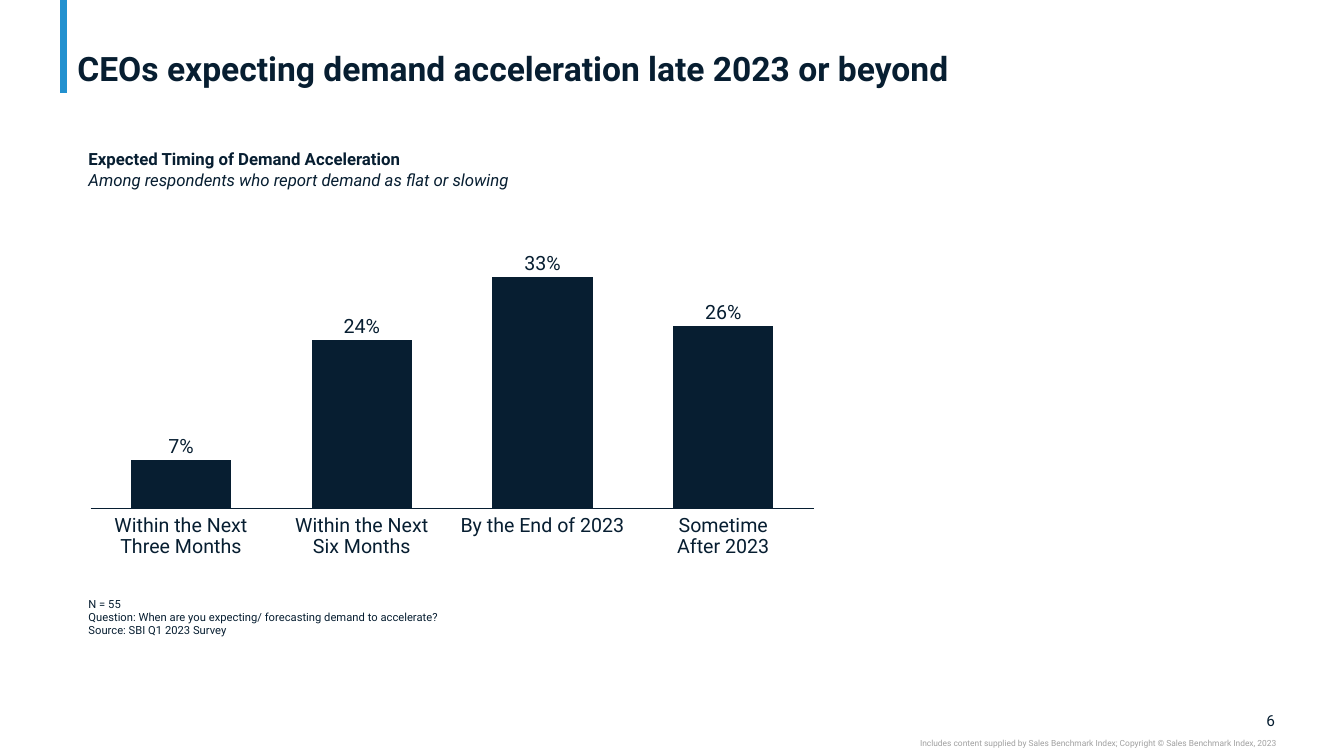
import lxml.etree
import pptx
import pptx.chart.data
import pptx.dml.color
import pptx.enum.chart
import pptx.enum.shapes
import pptx.enum.text
import pptx.oxml
import pptx.oxml.ns
import pptx.util

Cm = pptx.util.Cm
Pt = pptx.util.Pt
Align = pptx.enum.text.PP_ALIGN
Anchor = pptx.enum.text.MSO_ANCHOR
qn = pptx.oxml.ns.qn

NAVY, BLUE, GREY = "071E31", "2391CF", "A0A0A0"


def colour(value):
    return pptx.dml.color.RGBColor.from_string(value)


class SlideBuilder:
    def __init__(self, page, font="Roboto"):
        self.page = page
        self.font = font

    def text(self, left, top, width, height, paras, size, color=NAVY, align=Align.LEFT,
             anchor=Anchor.TOP, insets=(0, 0), wrap=True, spacing=None):
        """Each para is a list of lines; each line is (words, bold, italic)."""
        box = self.page.shapes.add_textbox(Cm(left), Cm(top), Cm(width), Cm(height))
        frame = box.text_frame
        frame.word_wrap = wrap
        frame.vertical_anchor = anchor
        frame.margin_left = frame.margin_right = Cm(insets[0])
        frame.margin_top = frame.margin_bottom = Cm(insets[1])
        for index, lines in enumerate(paras):
            para = frame.add_paragraph() if index else frame.paragraphs[0]
            para.alignment = align
            if spacing:
                para.line_spacing = spacing
            for number, (words, bold, italic) in enumerate(lines):
                if number:
                    para.add_line_break()
                span = para.add_run()
                span.text = words
                span.font.name = self.font
                span.font.size = Pt(size)
                span.font.bold = bold
                span.font.italic = italic
                span.font.color.rgb = colour(color)

    def line(self, x1, y1, x2, y2, color, width):
        line = self.page.shapes.add_connector(
            pptx.enum.shapes.MSO_CONNECTOR.STRAIGHT, Cm(x1), Cm(y1), Cm(x2), Cm(y2))
        line.line.color.rgb = colour(color)
        line.line.width = Pt(width)
        lxml.etree.SubElement(line.element.spPr, qn("a:effectLst"))

    def columns(self, left, top, width, height, plot, names, values, maximum):
        data = pptx.chart.data.CategoryChartData()
        data.categories = names
        data.add_series("Series 1", values)
        chart = self.page.shapes.add_chart(
            pptx.enum.chart.XL_CHART_TYPE.COLUMN_STACKED,
            Cm(left), Cm(top), Cm(width), Cm(height), data).chart
        chart.has_title = False
        chart.has_legend = False
        chart.font.name = self.font
        chart.font.size = Pt(10)
        chart.font.color.rgb = colour(NAVY)

        bars = chart.plots[0]
        bars.gap_width = 80
        bars.overlap = 100
        bars.vary_by_categories = False
        fill = bars.series[0].format.fill
        fill.solid()
        fill.fore_color.rgb = colour(NAVY)

        axis = chart.category_axis
        axis.tick_label_position = pptx.enum.chart.XL_TICK_LABEL_POSITION.NONE
        axis.major_tick_mark = pptx.enum.chart.XL_TICK_MARK.NONE
        axis.format.line.color.rgb = colour(NAVY)
        axis.format.line.width = Pt(0.75)
        scale = chart.value_axis
        scale.minimum_scale = 0
        scale.maximum_scale = maximum
        scale.has_major_gridlines = False
        scale.visible = False

        # Fixed inner plot area
        area = chart.element.xpath("c:chart/c:plotArea")[0]
        for old in area.findall(qn("c:layout")):
            area.remove(old)
        layout = pptx.oxml.parse_xml(
            f'<c:layout {pptx.oxml.ns.nsdecls("c")}><c:manualLayout/></c:layout>')
        settings = [("layoutTarget", "inner"), ("xMode", "edge"), ("yMode", "edge")]
        settings += zip("xywh", plot)
        for tag, value in settings:
            lxml.etree.SubElement(layout[0], qn(f"c:{tag}")).set("val", str(value))
        area.insert(0, layout)


def main():
    deck = pptx.Presentation()
    deck.slide_width, deck.slide_height = Cm(33.87), Cm(19.05)
    slide = SlideBuilder(deck.slides.add_slide(deck.slide_layouts[6]))

    # Accent bar, page number and copyright
    slide.line(1.6, 0, 1.6, 2.34, BLUE, 5)
    slide.text(31.29, 17.91, 0.84, 0.48, [[("6", False, False)]], 11,
               align=Align.RIGHT, anchor=Anchor.MIDDLE)
    notice = ("Includes content supplied by Sales Benchmark Index; "
              "Copyright © Sales Benchmark Index, 2023")
    slide.text(19.05, 18.59, 13.11, 0.25, [[(notice, False, False)]], 6, GREY, Align.RIGHT)

    # Title and chart heading
    title = "CEOs expecting demand acceleration late 2023 or beyond"
    slide.text(1.7, 0.1, 30.45, 2.13, [[(title, True, False)]], 24,
               anchor=Anchor.BOTTOM, insets=(0.25, 0), spacing=0.9)
    slide.text(1.98, 3.63, 13.64, 1.27, [[
        ("Expected Timing of Demand Acceleration", True, False),
        ("Among respondents who report demand as flat or slowing", False, True),
    ]], 12, insets=(0.25, 0.13))

    # Survey notes
    notes = ["N = 55",
             "Question: When are you expecting/ forecasting demand to accelerate?",
             "Source: SBI Q1 2023 Survey"]
    slide.text(1.98, 14.91, 13.64, 1.63, [[(note, False, False)] for note in notes], 8,
               insets=(0.25, 0.13))

    # Column chart: bar height, value label, category, category width, wrap
    timings = [
        (21, "7%", "Within the Next Three Months", 3.5, True),
        (73, "24%", "Within the Next Six Months", 3.5, True),
        (100, "33%", "By the End of 2023", 4.3, False),
        (79, "26%", "Sometime After 2023", 2.42, True),
    ]
    left, top, width, height = 2.06, 4.65, 18.69, 8.41
    plot = (0.012, 0.027, 0.975, 0.945)
    maximum = 136
    slide.columns(left, top, width, height, plot, ["1", "2", "3", "4"],
                  [timing[0] for timing in timings], maximum)

    # Labels centred above and below each bar
    step = width * plot[2] / len(timings)
    base = top + height * (plot[1] + plot[3])
    label_width, label_height, gap = 1.12, 0.53, 0.05
    for index, (value, label, name, name_width, wrap) in enumerate(timings):
        centre = left + width * plot[0] + step * (index + 0.5)
        bar_top = base - height * plot[3] * value / maximum
        slide.text(centre - label_width / 2, bar_top - gap - label_height,
                   label_width, label_height, [[(label, False, False)]], 14,
                   align=Align.CENTER, anchor=Anchor.BOTTOM, insets=(0.08, 0),
                   wrap=False, spacing=0.9)
        slide.text(centre - name_width / 2, 12.98, name_width, 1.07,
                   [[(name, False, False)]], 14, align=Align.CENTER,
                   wrap=wrap, spacing=0.9)

    deck.save("out.pptx")


if __name__ == "__main__":
    main()
